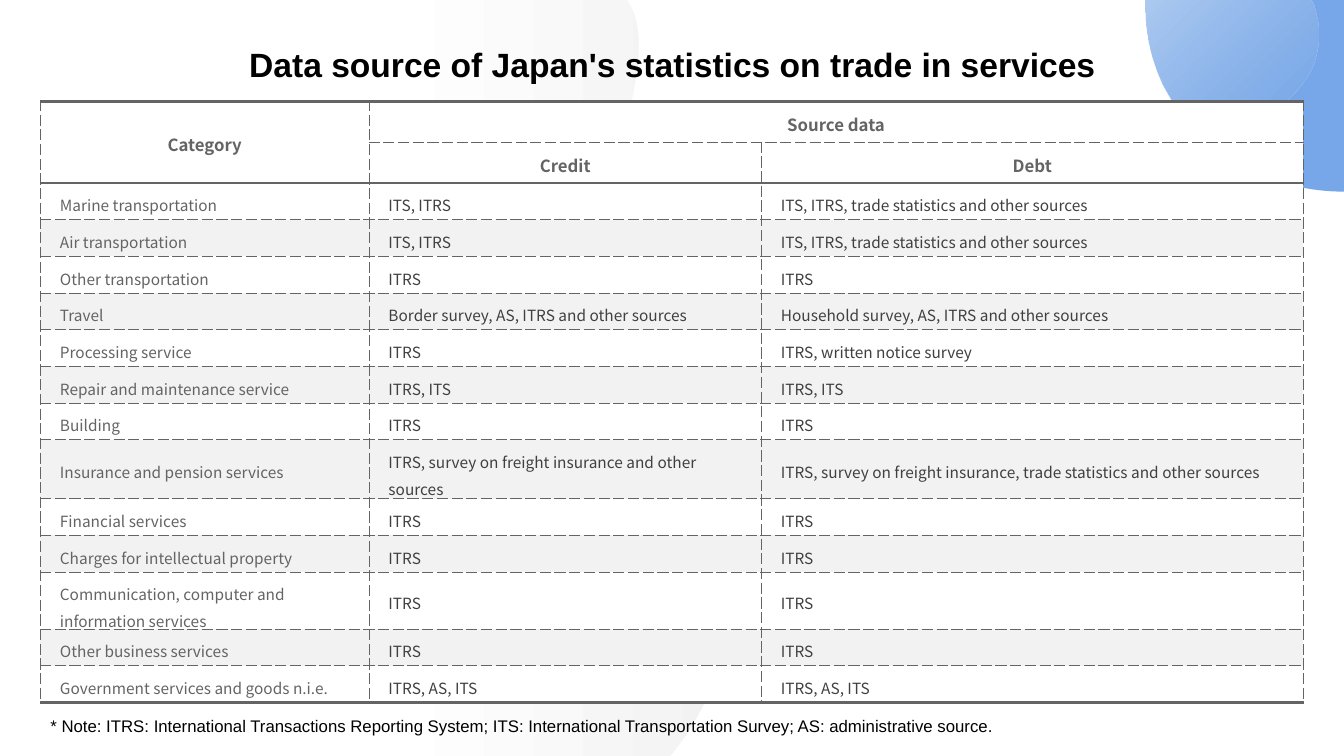
from lxml.etree import SubElement
from pptx import Presentation
from pptx.dml.color import RGBColor
from pptx.enum.text import MSO_ANCHOR, PP_ALIGN
from pptx.oxml.ns import qn
from pptx.util import Cm, Pt

WHITE, BLACK, BAND, GREY, DARK = "FFFFFF", "000000", "F2F2F2", "646464", "404040"
SKY, PALE = "77A7E8", "ADCAF1"
TABLE_FONT = "Noto Sans CJK SC"
DASHED, THICK = (0.75, "sysDash"), (2.25, "solid")

# Outlines in cm from the box corner: pairs are lines, sixes are Bezier curves.
WAVE = [(0, 19.05), (0, 0), (6.12, 0), (6.17, 0.08),
        (7.08, 1.6, 5.1, 5.05, 5.53, 7.42),
        (5.99, 9.86, 8.68, 12.45, 8.79, 14.55),
        (8.84, 16, 8.3, 17.58, 7.44, 18.75), (7.21, 19.05)]
LARGE_DISC = [(0, 0), (4.99, 0), (4.99, 4.83), (2.24, 4.83, 0, 2.77, 0, 0.23)]
SMALL_DISC = [(0, 0), (4.14, 0), (4.22, 0.18),
              (4.29, 0.41, 4.34, 0.64, 4.34, 0.89),
              (4.34, 2.16, 3.12, 3.2, 1.63, 3.2),
              (1.55, 3.2, 1.45, 3.2, 1.37, 3.18), (1.14, 3.15), (1.12, 3.15),
              (0.41, 2.36, 0, 1.35, 0, 0.23)]

COLUMN_WIDTHS = [8.28, 9.89, 13.65]
TABLE_HEIGHT = 15.11
HEADER_HEIGHT, TALL_HEIGHT = 1.03, 1.48
ROW_HEIGHT = 11.1 / 12
TALL_ROW = 9
HEADERS = [("Category", "Source data", ""), ("", "Credit", "Debt")]
SOURCES = [
    ("Marine transportation", "ITS, ITRS", "ITS, ITRS, trade statistics and other sources"),
    ("Air transportation", "ITS, ITRS", "ITS, ITRS, trade statistics and other sources"),
    ("Other transportation", "ITRS", "ITRS"),
    ("Travel", "Border survey, AS, ITRS and other sources",
     "Household survey, AS, ITRS and other sources"),
    ("Processing service", "ITRS", "ITRS, written notice survey"),
    ("Repair and maintenance service", "ITRS, ITS", "ITRS, ITS"),
    ("Building", "ITRS", "ITRS"),
    ("Insurance and pension services", "ITRS, survey on freight insurance and other sources",
     "ITRS, survey on freight insurance, trade statistics and other sources"),
    ("Financial services", "ITRS", "ITRS"),
    ("Charges for intellectual property", "ITRS", "ITRS"),
    ("Communication, computer and information services", "ITRS", "ITRS"),
    ("Other business services", "ITRS", "ITRS"),
    ("Government services and goods n.i.e.", "ITRS, AS, ITS", "ITRS, AS, ITS"),
]


def rgb(color):
    return RGBColor.from_string(color)


def write(tf, text, size=12, font="Arial", color=BLACK, bold=False,
          align=PP_ALIGN.LEFT, spacing=None):
    p = tf.paragraphs[0]
    p.alignment = align
    if spacing:
        p.line_spacing = spacing
    r = p.add_run()
    r.text = text
    r.font.size, r.font.name, r.font.bold = Pt(size), font, bold
    r.font.color.rgb = rgb(color)


def add_text(s, left, top, width, height, text, **text_format):
    tf = s.shapes.add_textbox(Cm(left), Cm(top), Cm(width), Cm(height)).text_frame
    tf.word_wrap = True
    write(tf, text, **text_format)
    return tf


def bend_lines(sp, outline):
    """Turn the line segments of a freeform into curves where the outline has them."""
    for line, part in zip(list(sp.element.iter(qn("a:lnTo"))), outline[1:]):
        if len(part) == 6:
            line.tag = qn("a:cubicBezTo")
            line.clear()
            for x, y in zip(part[::2], part[1::2]):
                SubElement(line, qn("a:pt"), x=str(Cm(x)), y=str(Cm(y)))


def add_outline(s, left, top, outline, colors, angle=0):
    """Add a borderless form with one solid colour or a two-colour gradient."""
    points = [(Cm(left + part[-2]), Cm(top + part[-1])) for part in outline]
    builder = s.shapes.build_freeform(*points[0])
    builder.add_line_segments(points[1:], close=False)
    sp = builder.convert_to_shape()
    bend_lines(sp, outline)
    SubElement(next(sp.element.iter(qn("a:path"))), qn("a:close"))
    sp.shadow.inherit = False
    sp.line.fill.background()
    if len(colors) == 1:
        sp.fill.solid()
        sp.fill.fore_color.rgb = rgb(colors[0])
    else:
        sp.fill.gradient()
        sp.fill.gradient_angle = angle
        for stop, color in zip(sp.fill.gradient_stops, colors):
            stop.color.rgb = rgb(color)
    return sp


def add_corner_discs(s, left, top):
    add_outline(s, left, top, LARGE_DISC, [SKY])
    disc = add_outline(s, left, top, SMALL_DISC, [PALE, SKY], angle=315)
    last_color = list(disc.element.iter(qn("a:srgbClr")))[-1]
    SubElement(last_color, qn("a:alpha"), val="70000")


def set_borders(cell, **borders):
    tcPr = cell._tc.get_or_add_tcPr()
    for side in "LRTB":
        width, dash = borders.get(side, DASHED)
        ln = SubElement(tcPr, qn("a:ln" + side), w=str(Pt(width)))
        fill = SubElement(ln, qn("a:solidFill"))
        SubElement(fill, qn("a:srgbClr"), val=GREY)
        SubElement(ln, qn("a:prstDash"), val=dash)


def add_source_table(s, left, top):
    rows = HEADERS + SOURCES
    header_count = len(HEADERS)
    frame = s.shapes.add_table(len(rows), len(COLUMN_WIDTHS), Cm(left), Cm(top),
                               Cm(sum(COLUMN_WIDTHS)), Cm(TABLE_HEIGHT))
    table = frame.table
    table.first_row = table.horz_banding = False
    for column, width in zip(table.columns, COLUMN_WIDTHS):
        column.width = Cm(width)
    for i, row in enumerate(table.rows):
        row.height = Cm(HEADER_HEIGHT if i < header_count
                        else TALL_HEIGHT if i == TALL_ROW else ROW_HEIGHT)
    frame.height = Cm(TABLE_HEIGHT)
    table.cell(0, 0).merge(table.cell(1, 0))
    table.cell(0, 1).merge(table.cell(0, 2))

    for i, texts in enumerate(rows):
        is_header = i < header_count
        for j, text in enumerate(texts):
            cell = table.cell(i, j)
            if cell.is_spanned:
                continue
            last_row = i + (cell.span_height if cell.is_merge_origin else 1) - 1
            set_borders(cell,
                        T=THICK if i in (0, header_count) else DASHED,
                        B=THICK if last_row in (header_count - 1, len(rows) - 1) else DASHED)
            cell.fill.solid()
            cell.fill.fore_color.rgb = rgb(BAND if not is_header and i % 2 else WHITE)
            cell.vertical_anchor = MSO_ANCHOR.MIDDLE
            cell.margin_left = cell.margin_right = Cm(0.49)
            cell.margin_top = cell.margin_bottom = Cm(0.16)
            write(cell.text_frame, text, font=TABLE_FONT, bold=is_header, spacing=1.2,
                  size=12 if is_header else 11,
                  color=GREY if is_header or j == 0 else DARK,
                  align=PP_ALIGN.CENTER if is_header else PP_ALIGN.LEFT)


def add_note(s, left, top, width, height):
    tf = add_text(s, left, top, width, height,
                  "* Note: ITRS: International Transactions Reporting System; "
                  "ITS: International Transportation Survey; AS: administrative source.")
    tf.vertical_anchor = MSO_ANCHOR.BOTTOM
    tf.margin_bottom = Cm(0.13)


def main():
    prs = Presentation()
    prs.slide_width, prs.slide_height = Cm(33.87), Cm(19.05)
    s = prs.slides.add_slide(prs.slide_layouts[6])
    add_outline(s, 9.68, 0, WAVE, [WHITE, BAND])
    add_corner_discs(s, 28.88, 0)
    add_text(s, 4.98, 0.99, 23.93, 1.27,
             "Data source of Japan's statistics on trade in services",
             size=24, bold=True, align=PP_ALIGN.CENTER)
    add_source_table(s, 1.02, 2.55)
    add_note(s, 1.02, 17.4, 25.93, 1.27)
    prs.save("out.pptx")


if __name__ == "__main__":
    main()
